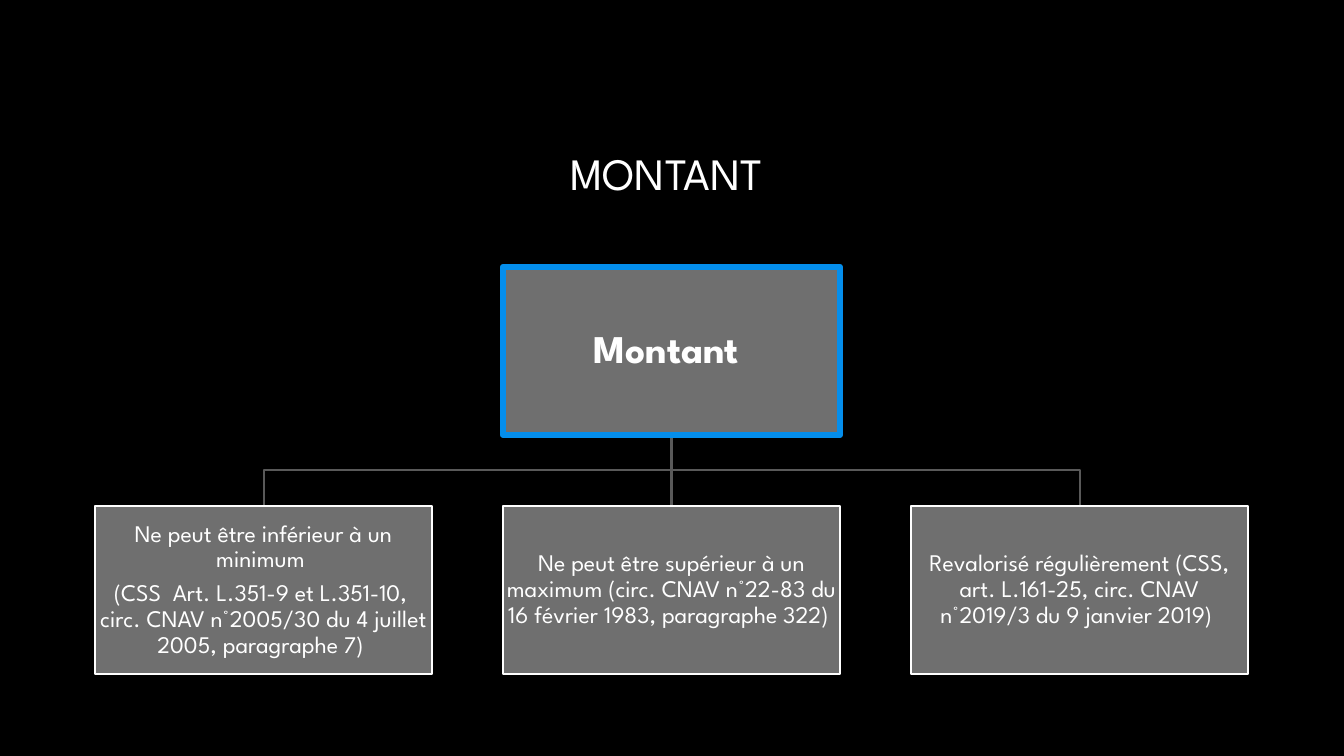
from pptx import Presentation
from pptx.dml.color import RGBColor
from pptx.enum.shapes import MSO_CONNECTOR, MSO_SHAPE
from pptx.enum.text import MSO_ANCHOR, PP_ALIGN
from pptx.util import Pt
from lxml import etree

PX = 12192000 / 1344
FONT = "League Spartan"
BLACK = RGBColor(0x00, 0x00, 0x00)
WHITE = RGBColor(0xFF, 0xFF, 0xFF)
GREY = RGBColor(0x6F, 0x6F, 0x6F)
DARK_GREY = RGBColor(0x59, 0x59, 0x59)
BLUE = RGBColor(0x04, 0x8E, 0xEC)
DRAWING_NS = "http://schemas.openxmlformats.org/drawingml/2006/main"

BOX_WIDTH, BOX_HEIGHT = 337, 168
RULES = [
    ["Ne peut être inférieur à un minimum ",
     "(CSS  Art. L.351-9 et L.351-10,  circ. CNAV n°2005/30 du 4 juillet 2005, paragraphe 7) "],
    ["Ne peut être supérieur à un maximum (circ. CNAV n°22-83 du 16 février 1983, paragraphe 322) "],
    ["Revalorisé régulièrement (CSS, art. L.161-25, circ. CNAV n°2019/3 du 9 janvier 2019) "],
]


def px(length):
    return round(length * PX)


def format_paragraph(paragraph, size, bold=False):
    paragraph.alignment = PP_ALIGN.CENTER
    paragraph.font.name = FONT
    paragraph.font.size = Pt(size)
    paragraph.font.bold = bold
    paragraph.font.color.rgb = WHITE


def add_title(slide, text, left, top, width, height):
    title = slide.shapes.title
    title.left, title.top, title.width, title.height = map(px, (left, top, width, height))
    title.text_frame.text = text
    title.text_frame.vertical_anchor = MSO_ANCHOR.MIDDLE
    format_paragraph(title.text_frame.paragraphs[0], 32)


def add_box(slide, texts, left, top, size, line_color, line_width, bold=False):
    box = slide.shapes.add_shape(
        MSO_SHAPE.RECTANGLE, px(left), px(top), px(BOX_WIDTH), px(BOX_HEIGHT))
    box.shadow.inherit = False
    box.fill.solid()
    box.fill.fore_color.rgb = GREY
    box.line.color.rgb = line_color
    box.line.width = Pt(line_width)
    frame = box.text_frame
    frame.word_wrap = True
    frame.vertical_anchor = MSO_ANCHOR.MIDDLE
    frame.margin_left = frame.margin_right = frame.margin_top = frame.margin_bottom = px(1)
    frame.text = "\n".join(texts)
    for paragraph in frame.paragraphs:
        format_paragraph(paragraph, size, bold)
        paragraph.line_spacing = 0.9
        paragraph.space_after = Pt(size * 0.35)


def add_branch(slide, start_x, start_y, end_x, end_y):
    """Link a parent to a child: straight when aligned, else with two bends."""
    if start_x == end_x:
        branch = slide.shapes.add_connector(
            MSO_CONNECTOR.STRAIGHT, *map(px, (start_x, start_y, end_x, end_y)))
        etree.SubElement(branch.line._get_or_add_ln().getparent(), f"{{{DRAWING_NS}}}effectLst")
    else:
        middle_y = (start_y + end_y) / 2
        builder = slide.shapes.build_freeform(start_x, start_y, scale=PX)
        builder.add_line_segments(
            [(start_x, middle_y), (end_x, middle_y), (end_x, end_y)], close=False)
        branch = builder.convert_to_shape()
        branch.shadow.inherit = False
        branch.fill.background()
    branch.line.color.rgb = DARK_GREY
    branch.line.width = Pt(1.5)


def add_hierarchy(slide, left, top, column_step, row_step):
    """Place the root above the middle of a row of rule boxes."""
    root_left = left + column_step * (len(RULES) - 1) // 2
    child_top = top + row_step
    child_lefts = [left + column_step * index for index in range(len(RULES))]
    half = BOX_WIDTH / 2
    for child_left in child_lefts:
        add_branch(slide, root_left + half, top + BOX_HEIGHT, child_left + half, child_top)
    add_box(slide, ["Montant "], root_left, top, 28, BLUE, 4.5, bold=True)
    for child_left, texts in zip(child_lefts, RULES):
        add_box(slide, texts, child_left, child_top, 17, WHITE, 1.5)


def main():
    presentation = Presentation()
    presentation.slide_width, presentation.slide_height = px(1344), px(756)
    slide = presentation.slides.add_slide(presentation.slide_layouts[5])
    slide.background.fill.solid()
    slide.background.fill.fore_color.rgb = BLACK
    add_title(slide, "MONTANT ", 126, 68, 1092, 210)
    add_hierarchy(slide, left=95, top=267, column_step=408, row_step=239)
    presentation.save("out.pptx")


if __name__ == "__main__":
    main()
